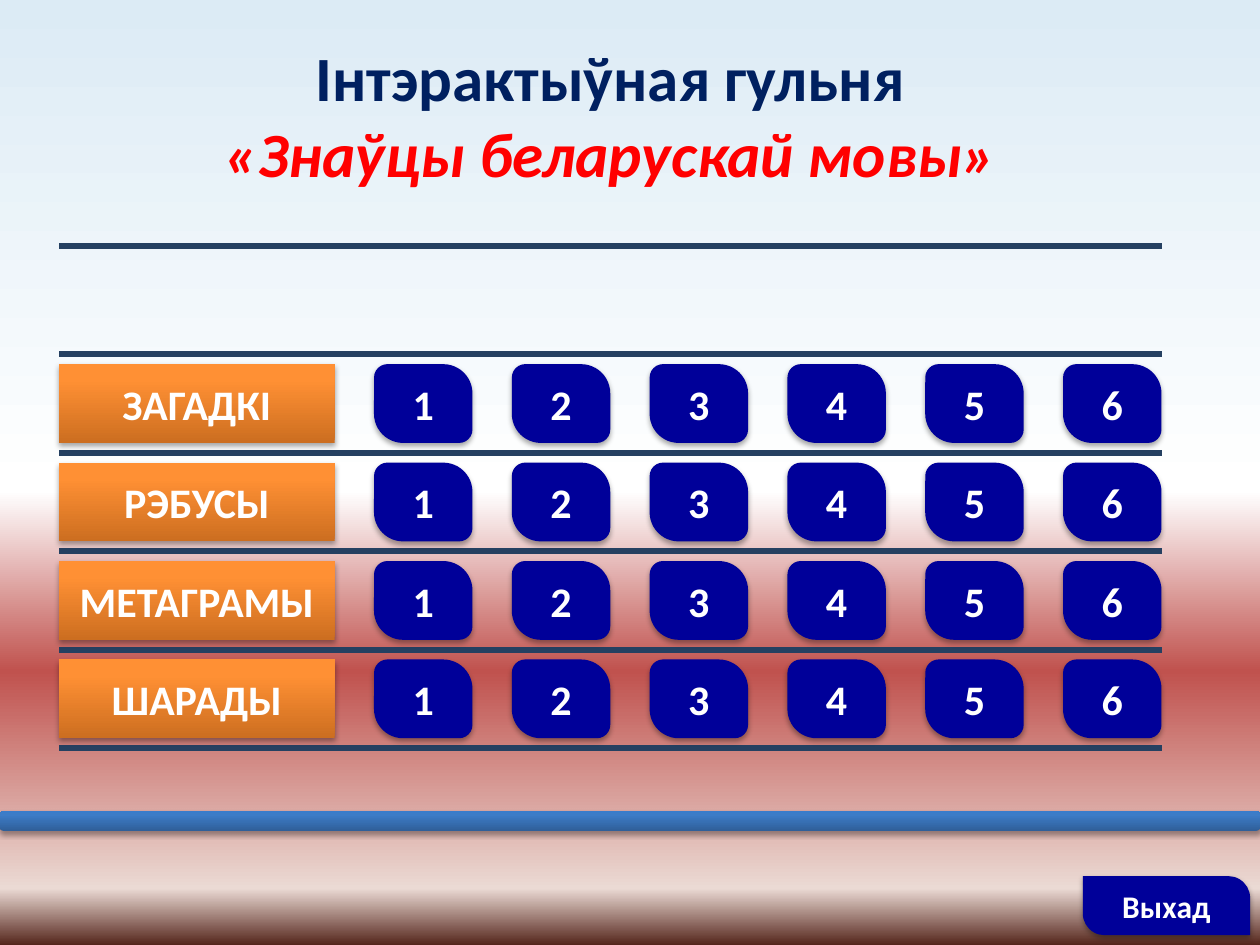
"""Build the menu slide of a Belarusian language quiz game."""
from lxml.etree import SubElement
from pptx import Presentation
from pptx.dml.color import RGBColor
from pptx.enum.shapes import MSO_CONNECTOR, MSO_SHAPE as Preset
from pptx.enum.text import MSO_ANCHOR as Anchor, PP_ALIGN as Align
from pptx.oxml.ns import qn
from pptx.util import Inches, Pt

COLORS = {"navy": "002060", "red": "FF0000", "white": "FFFFFF", "button": "000099",
          "rule": "254061", "shadow": "000000"}
GRADIENTS = {
    "sky": [(0, "DCEBF5"), (52, "FFFFFF"), (71, "C0524E"), (94, "EBDAD4"), (100, "55261C")],
    "orange": [(0, "CC6E20"), (80, "FF9034"), (100, "FF9136")],
    "blue": [(0, "2F5F99"), (80, "3D7CC7"), (100, "3A7CCB")],
}
CATEGORIES = ["ЗАГАДКІ", "РЭБУСЫ", "МЕТАГРАМЫ", "ШАРАДЫ"]
QUESTIONS = 6

presentation = Presentation()
presentation.slide_width = Inches(10)
presentation.slide_height = Inches(7.5)
slide = presentation.slides.add_slide(presentation.slide_layouts[6])
CELL = presentation.slide_width / 64
LEFT, RIGHT = 3, 59
FIRST_ROW, ROW_STEP = 18, 5
FIRST_BUTTON, BUTTON_STEP = 19, 7


def paint_gradient(fill, element, name, degrees):
    fill.gradient()
    gradient = element.find(".//" + qn("a:gradFill"))
    stops = gradient.find(qn("a:gsLst"))
    for stop in list(stops):
        stops.remove(stop)
    for position, color in GRADIENTS[name]:
        stop = SubElement(stops, qn("a:gs"), pos=str(position * 1000))
        SubElement(stop, qn("a:srgbClr"), val=color)
    gradient.find(qn("a:lin")).set("ang", str(degrees * 60000))


def add_tile(preset, box, fill, text="", size=24, corners=()):
    shape = slide.shapes.add_shape(preset, *[round(value * CELL) for value in box])
    for index, corner in enumerate(corners):
        shape.adjustments[index] = corner
    if fill in GRADIENTS:
        paint_gradient(shape.fill, shape._element, fill, 270)
    else:
        shape.fill.solid()
        shape.fill.fore_color.rgb = RGBColor.from_string(COLORS[fill])
    shape.line.fill.background()
    shape.shadow.inherit = False
    shadow = SubElement(shape._element.spPr.find(qn("a:effectLst")), qn("a:outerShdw"),
                        blurRad="40000", dist="23000", dir="5400000", rotWithShape="0")
    shadow_color = SubElement(shadow, qn("a:srgbClr"), val=COLORS["shadow"])
    SubElement(shadow_color, qn("a:alpha"), val="35000")
    if text:
        frame = shape.text_frame
        frame.vertical_anchor = Anchor.MIDDLE
        frame.margin_left = frame.margin_right = 0
        paragraph = frame.paragraphs[0]
        paragraph.text = text
        paragraph.alignment = Align.CENTER
        font = paragraph.font
        font.name, font.size, font.bold = "Calibri", Pt(size), True
        font.color.rgb = RGBColor.from_string(COLORS["white"])


paint_gradient(slide.background.fill, slide._element, "sky", 90)

title = slide.shapes.add_textbox(*[round(value * CELL) for value in (10.5, 2.8, 41, 6)])
title.text_frame.word_wrap = True
title.text_frame.vertical_anchor = Anchor.MIDDLE
paragraph = title.text_frame.paragraphs[0]
paragraph.alignment = Align.CENTER
paragraph.font.name, paragraph.font.size, paragraph.font.bold = "Calibri", Pt(36), True
heading = paragraph.add_run()
heading.text = "Інтэрактыўная гульня"
heading.font.color.rgb = RGBColor.from_string(COLORS["navy"])
paragraph.add_line_break()
game_name = paragraph.add_run()
game_name.text = "«Знаўцы беларускай мовы»"
game_name.font.italic = True
game_name.font.color.rgb = RGBColor.from_string(COLORS["red"])

row_rules = [FIRST_ROW + ROW_STEP * row for row in range(len(CATEGORIES) + 1)]
for rule_top in [12.5, *row_rules]:
    rule = slide.shapes.add_connector(
        MSO_CONNECTOR.STRAIGHT,
        *[round(value * CELL) for value in (LEFT, rule_top, RIGHT, rule_top)])
    rule.line.width = Pt(3.5)
    rule.line.color.rgb = RGBColor.from_string(COLORS["rule"])
    SubElement(rule._element.spPr, qn("a:effectLst"))

for rule_top, category in zip(row_rules, CATEGORIES):
    top = rule_top + 0.5
    add_tile(Preset.RECTANGLE, (LEFT, top, 14, 4), "orange", category)
    for number in range(QUESTIONS):
        left = FIRST_BUTTON + BUTTON_STEP * number
        add_tile(Preset.ROUND_2_DIAG_RECTANGLE, (left, top, 5, 4), "button",
                 str(number + 1), corners=(0.17, 0.37))

add_tile(Preset.ROUND_2_DIAG_RECTANGLE, (55, 44.5, 8.5, 3), "button", "Выхад", 18, (0, 0.37))
add_tile(Preset.ROUNDED_RECTANGLE, (0, 41.2, 64, 1), "blue")

presentation.save("out.pptx")
